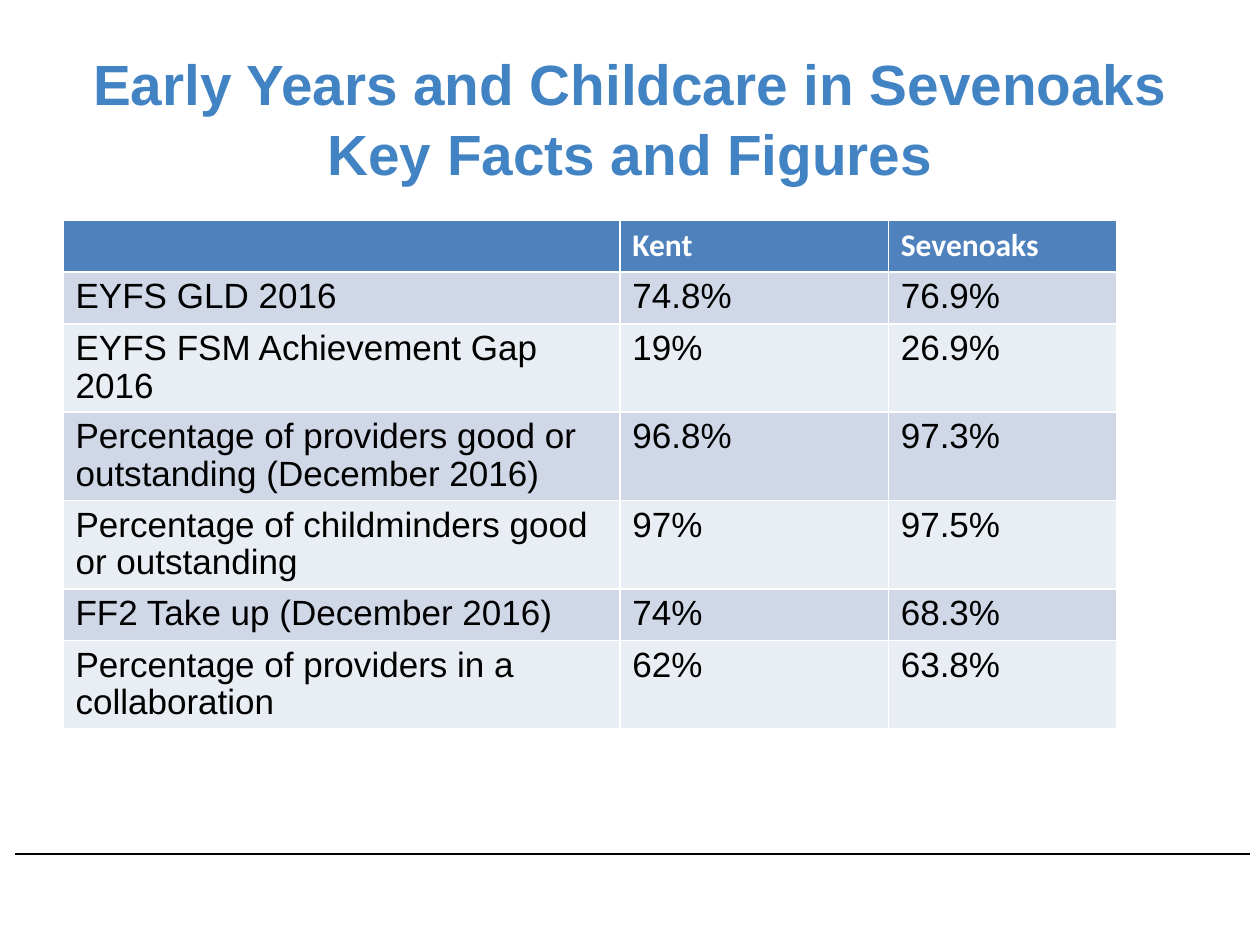
from lxml import etree
from pptx import Presentation
from pptx.dml.color import RGBColor
from pptx.enum import shapes, text
from pptx.oxml.ns import qn
from pptx.util import Inches, Pt

TITLE = "Early Years and Childcare in Sevenoaks Key Facts and Figures"
HEAD = ("", "Kent", "Sevenoaks")
FACTS = [
    ("EYFS GLD 2016", "74.8%", "76.9%"),
    ("EYFS FSM Achievement Gap 2016", "19%", "26.9%"),
    ("Percentage of providers good or outstanding (December 2016)",
     "96.8%", "97.3%"),
    ("Percentage of childminders good or outstanding", "97%", "97.5%"),
    ("FF2 Take up (December 2016)", "74%", "68.3%"),
    ("Percentage of providers in a collaboration", "62%", "63.8%"),
]
WIDTHS = (4.42, 2.13, 1.81)
ROW = 0.41
BANDS = ("D0D8E8", "E9EDF4")


def color(code):
    return RGBColor.from_string(code)


def write(frame, words, size, font="Arial", ink="000000", bold=False,
          align=None, space=None):
    para = frame.paragraphs[0]
    para.alignment = align
    para.line_spacing = space
    run = para.add_run()
    run.text = words
    run.font.size = Pt(size)
    run.font.name = font
    run.font.bold = bold
    run.font.color.rgb = color(ink)


def add_title(slide):
    title = slide.shapes.title
    title.left, title.top = Inches(0.5), Inches(0.3)
    title.width, title.height = Inches(9), Inches(1.25)
    frame = title.text_frame
    frame.word_wrap = True
    frame.vertical_anchor = text.MSO_ANCHOR.MIDDLE
    write(frame, TITLE, 32.4, ink="4283C4", bold=True,
          align=text.PP_ALIGN.CENTER, space=1.04)


def add_rule(slide):
    y = Inches(6.78)
    rule = slide.shapes.add_connector(
        shapes.MSO_CONNECTOR.STRAIGHT, Inches(0.12), y, Inches(9.92), y)
    rule.line.color.rgb = color("000000")
    rule.line.width = Pt(1)
    etree.SubElement(rule.element.spPr, qn("a:effectLst"))


def fill_row(row, words, fill, **style):
    row.height = Inches(ROW)
    for cell, word in zip(row.cells, words):
        cell.fill.solid()
        cell.fill.fore_color.rgb = color(fill)
        if word:
            write(cell.text_frame, word, **style)


def add_facts(slide):
    count = len(FACTS) + 1
    table = slide.shapes.add_table(
        count, len(HEAD), Inches(0.5), Inches(1.75),
        Inches(sum(WIDTHS)), Inches(ROW * count)).table
    for col, width in zip(table.columns, WIDTHS):
        col.width = Inches(width)
    # The default table style draws the white cell borders
    fill_row(table.rows[0], HEAD, "4F81BD",
             size=18, font="Calibri", ink="FFFFFF", bold=True)
    for i, fact in enumerate(FACTS):
        fill_row(table.rows[i + 1], fact, BANDS[i % 2], size=20, space=0.97)


def main():
    deck = Presentation()
    deck.slide_width, deck.slide_height = Inches(10), Inches(7.5)
    slide = deck.slides.add_slide(deck.slide_layouts[5])
    add_rule(slide)
    add_title(slide)
    add_facts(slide)
    deck.save("out.pptx")


if __name__ == "__main__":
    main()
